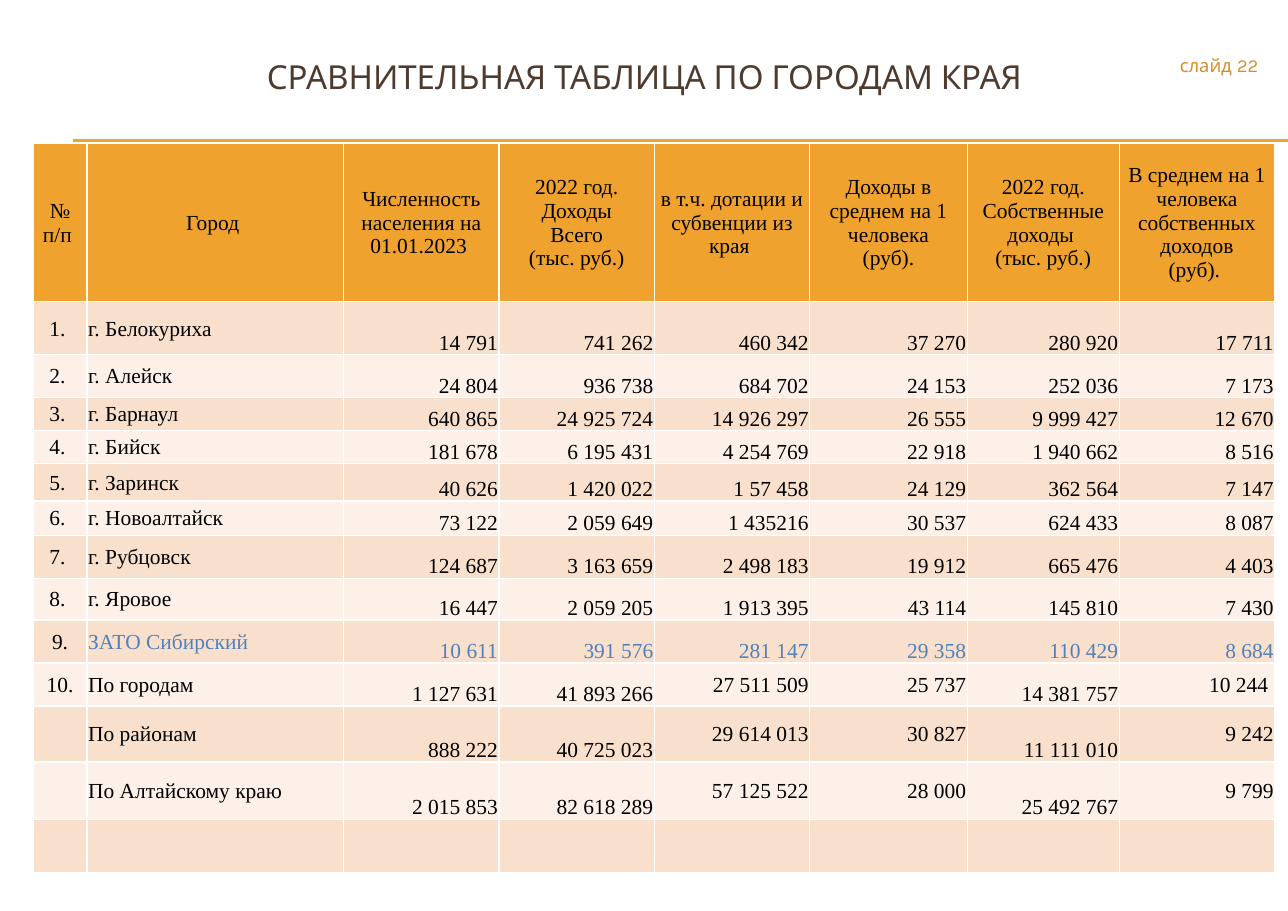
"""Builds the slide that compares the cities of the region."""
from pptx import Presentation
from pptx import util as u
from pptx.dml.color import RGBColor
from pptx.enum import shapes, text
from pptx.oxml import xmlchemy

COLORS = {"accent": "F0A22E", "title": "4E3B30", "label": "D48F29",
          "text": "000000", "highlight": "4F81BD",
          "odd": "F9E0CD", "even": "FCF0E8"}
ALIGN, ANCHOR = text.PP_ALIGN, text.MSO_ANCHOR
HEADING_FONT, TABLE_FONT = "Karla", "Times New Roman"

COLUMN_WIDTHS = [0.49, 2.33, 1.41, 1.41, 1.41, 1.43, 1.38, 1.41]
ROW_HEIGHTS = [1.44, 0.48, 0.39, 0.3, 0.3, 0.34, 0.31,
               0.39, 0.38, 0.39, 0.39, 0.51, 0.52, 0.48]
HEADERS = [
    "№ п/п ",
    "Город ",
    "Численность населения на 01.01.2023 ",
    "2022 год. Доходы\nВсего\n(тыс. руб.)",
    "в т.ч. дотации и субвенции из края ",
    "Доходы в среднем на 1 человека\n(руб).",
    "2022 год. Собственные доходы \n(тыс. руб.)",
    "В среднем на 1 человека собственных доходов\n(руб). ",
]
CITIES = [
    ["1. ", "г. Белокуриха", "14 791", "741 262", "460 342", "37 270", "280 920", "17 711"],
    ["2. ", "г. Алейск", "24 804", "936 738", "684 702", "24 153", "252 036", "7 173"],
    ["3. ", "г. Барнаул", "640 865", "24 925 724", "14 926 297", "26 555", "9 999 427", "12 670"],
    ["4. ", "г. Бийск", "181 678", "6 195 431", "4 254 769", "22 918", "1 940 662", "8 516"],
    ["5. ", "г. Заринск", "40 626", "1 420 022", "1 57 458", "24 129", "362 564", "7 147"],
    ["6. ", "г. Новоалтайск", "73 122", "2 059 649", "1 435216", " 30 537", "624 433", "8 087"],
    ["7. ", "г. Рубцовск", "124 687", "3 163 659", "2 498 183", "19 912", "665 476", "4 403"],
    ["8. ", "г. Яровое", "16 447", "2 059 205", "1 913 395", "43 114", "145 810", "7 430"],
    ["9.", "ЗАТО Сибирский", "10 611", "391 576", "281 147", "29 358", "110 429", "8 684"],
]
TOTALS = [
    ["10.", "По городам", "1 127 631", "41 893 266", "27 511 509", "25 737", "14 381 757", "10 244 "],
    ["", "По районам", "888 222", "40 725 023", "29 614 013", "30 827", "11 111 010", "9 242"],
    ["", "По Алтайскому краю", "2 015 853", "82 618 289", "57 125 522", "28 000", "25 492 767", "9 799"],
]
HIGHLIGHT_ROW = len(CITIES)
MIDDLE_TOTALS = {4, 5, 7}


def color(name):
    """Return the named colour."""
    return RGBColor.from_string(COLORS[name])


def write(frame, wording, font, size, tone, align):
    """Write one paragraph per line of the wording."""
    for index, line in enumerate(wording.split("\n")):
        paragraph = frame.add_paragraph() if index else frame.paragraphs[0]
        paragraph.alignment = align
        run = paragraph.add_run()
        run.text = line
        run.font.name, run.font.size, run.font.bold = font, u.Pt(size), False
        run.font.color.rgb = color(tone)


def place(shape, left, top, width, height):
    """Move and size a shape, in inches."""
    shape.left, shape.top = u.Inches(left), u.Inches(top)
    shape.width, shape.height = u.Inches(width), u.Inches(height)


def add_rule(slide, y):
    """Draw a thin accent line from the left margin to the slide edge."""
    rule = slide.shapes.add_connector(shapes.MSO_CONNECTOR.STRAIGHT, u.Inches(0.66),
                                      u.Inches(y), u.Inches(11.69), u.Inches(y))
    rule.line.color.rgb = color("accent")
    rule.line.width = u.Pt(0.75)
    properties = rule.line._get_or_add_ln().getparent()
    properties.append(xmlchemy.OxmlElement("a:effectLst"))


def set_title(slide, wording):
    """Place and fill the title."""
    title = slide.shapes.title
    place(title, 1.35, 0.54, 9, 0.31)
    title.text_frame.vertical_anchor = ANCHOR.MIDDLE
    title.text_frame.auto_size = text.MSO_AUTO_SIZE.NONE
    write(title.text_frame, wording, HEADING_FONT, 21.6, "title", ALIGN.CENTER)


def add_label(slide, wording, *box):
    """Add a right-aligned label for the slide number."""
    label = slide.shapes.add_textbox(0, 0, 0, 0)
    place(label, *box)
    label.text_frame.word_wrap = True
    write(label.text_frame, wording, HEADING_FONT, 12, "label", ALIGN.RIGHT)


def fill_cell(cell, wording, row, column):
    """Colour a cell by its row and set its text by its column."""
    cell.fill.solid()
    band = "accent" if row == 0 else "odd" if row % 2 else "even"
    cell.fill.fore_color.rgb = color(band)
    if not wording:
        return
    cell.margin_left = cell.margin_right = cell.margin_top = u.Inches(0.01)
    cell.margin_bottom = 0
    middle = (row == 0 or column < 2
              or row > HIGHLIGHT_ROW and column in MIDDLE_TOTALS)
    cell.vertical_anchor = ANCHOR.MIDDLE if middle else ANCHOR.BOTTOM
    if row == 0 or column == 0:
        align = ALIGN.CENTER
    else:
        align = ALIGN.LEFT if column == 1 else ALIGN.RIGHT
    tone = "highlight" if row == HIGHLIGHT_ROW and column else "text"
    write(cell.text_frame, wording, TABLE_FONT, 14, tone, align)


def add_city_table(slide):
    """Add the table of cities and totals, closed by an empty row."""
    rows = [HEADERS, *CITIES, *TOTALS, [""] * len(HEADERS)]
    table = slide.shapes.add_table(
        len(rows), len(HEADERS), u.Inches(0.3), u.Inches(1.3),
        u.Inches(sum(COLUMN_WIDTHS)), u.Inches(sum(ROW_HEIGHTS))).table
    for column, width in zip(table.columns, COLUMN_WIDTHS):
        column.width = u.Inches(width)
    for row, height in zip(table.rows, ROW_HEIGHTS):
        row.height = u.Inches(height)
    for r, entries in enumerate(rows):
        for c, wording in enumerate(entries):
            fill_cell(table.cell(r, c), wording, r, c)


def main():
    """Build and save the slide."""
    deck = Presentation()
    deck.slide_width, deck.slide_height = u.Inches(11.69), u.Inches(8.27)
    slide = deck.slides.add_slide(deck.slide_layouts[5])
    for y in (1.27, 1.28):
        add_rule(slide, y)
    set_title(slide, "СРАВНИТЕЛЬНАЯ ТАБЛИЦА ПО ГОРОДАМ КРАЯ")
    add_city_table(slide)
    add_label(slide, "22", 10.55, 0.44, 0.97, 0.3)
    add_label(slide, "слайд", 7.58, 0.44, 3.7, 0.35)
    deck.save("out.pptx")


if __name__ == "__main__":
    main()
